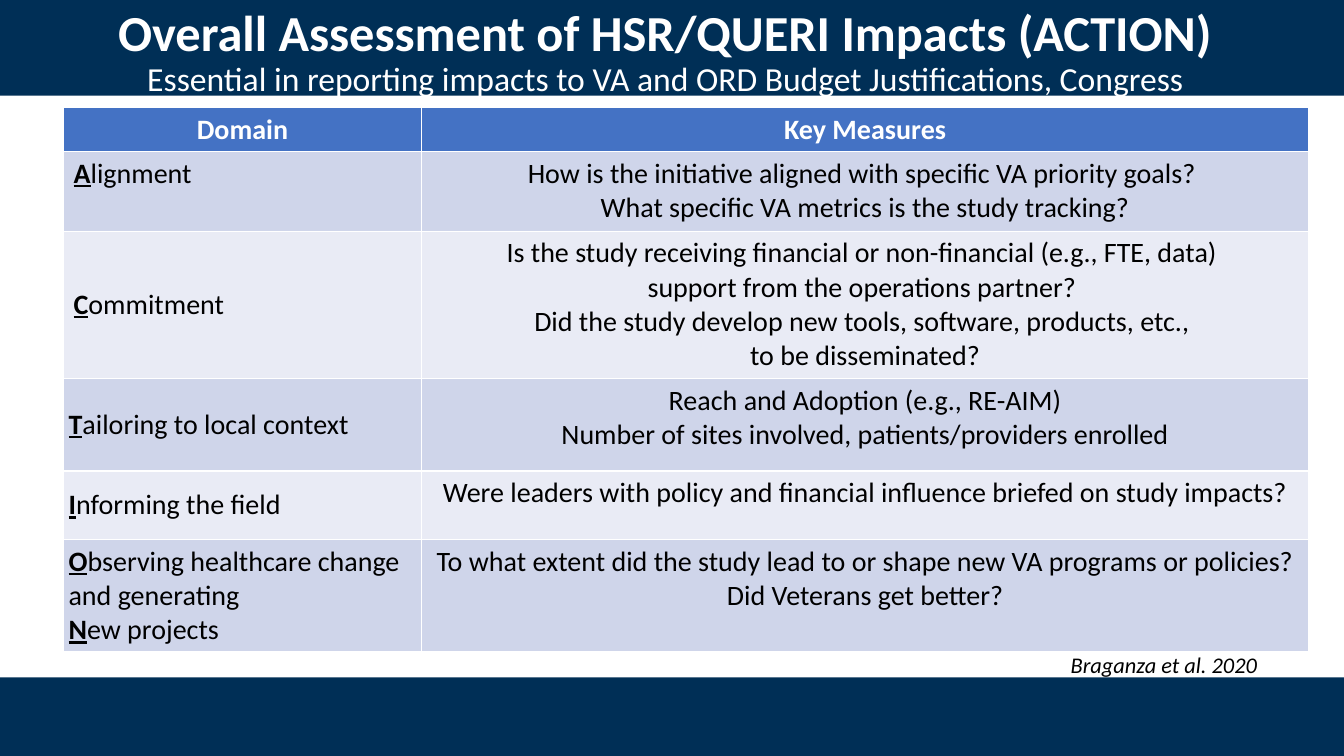
"""Build the ACTION impact assessment slide."""
import pptx
import pptx.dml.color
import pptx.enum.shapes
import pptx.enum.text
import pptx.util

Inches = pptx.util.Inches
ALIGN = pptx.enum.text.PP_ALIGN
ANCHOR = pptx.enum.text.MSO_ANCHOR
NAVY, WHITE, BLACK = "002F56", "FFFFFF", "000000"
HEADER_BLUE, BANDS = "4472C4", ["CFD5EA", "E9EBF5"]


def color(hex_value):
    return pptx.dml.color.RGBColor.from_string(hex_value)


def style(run, size, hex_value, bold=False):
    run.font.name = "Calibri"
    run.font.size = pptx.util.Pt(size)
    run.font.color.rgb = color(hex_value)
    run.font.bold = bold


deck = pptx.Presentation()
deck.slide_width, deck.slide_height = Inches(13.33), Inches(7.5)
slide = deck.slides.add_slide(deck.slide_layouts[6])

for top, height in [(0, 0.95), (6.72, 0.78)]:
    band = slide.shapes.add_shape(pptx.enum.shapes.MSO_SHAPE.RECTANGLE,
                                  0, Inches(top), deck.slide_width, Inches(height))
    band.shadow.inherit = False
    band.fill.solid()
    band.fill.fore_color.rgb = color(NAVY)
    band.line.fill.background()

title = slide.shapes.add_textbox(Inches(0.22), Inches(0.12), Inches(12.76), Inches(0.82)).text_frame
title.word_wrap = True
title.vertical_anchor = ANCHOR.MIDDLE
heading = title.paragraphs[0]
heading.text = ("Overall Assessment of HSR/QUERI Impacts (ACTION)\v"
                "Essential in reporting impacts to VA and ORD Budget Justifications, Congress")
heading.alignment = ALIGN.CENTER
heading.line_spacing = 0.9
style(heading.runs[0], 36, WHITE, bold=True)
style(heading.runs[1], 24, WHITE)

domains = [
    (0.79, 0.1, ANCHOR.TOP, ["Alignment"],
     "How is the initiative aligned with specific VA priority goals? \v"
     "What specific VA metrics is the study tracking?"),
    (1.46, 0.1, ANCHOR.MIDDLE, ["Commitment"],
     "Is the study receiving financial or non-financial (e.g., FTE, data) \v"
     "support from the operations partner? \v"
     "Did the study develop new tools, software, products, etc., \v"
     "to be disseminated?"),
    (0.92, 0.05, ANCHOR.MIDDLE, ["Tailoring to local context"],
     "Reach and Adoption (e.g., RE-AIM)\n"
     "Number of sites involved, patients/providers enrolled"),
    (0.68, 0.05, ANCHOR.MIDDLE, ["Informing the field"],
     "Were leaders with policy and financial influence briefed on study impacts?"),
    (1.11, 0.05, ANCHOR.MIDDLE, ["Observing healthcare change and generating ", "New projects"],
     "To what extent did the study lead to or shape new VA programs or policies?\n"
     "Did Veterans get better?"),
]
header_height = 0.43
column_widths = [3.55, 8.8]
table_height = header_height + sum(domain[0] for domain in domains)
table = slide.shapes.add_table(len(domains) + 1, 2, Inches(0.63), Inches(1.07),
                               Inches(sum(column_widths)), Inches(table_height)).table
for column, width in zip(table.columns, column_widths):
    column.width = Inches(width)

table.rows[0].height = Inches(header_height)
for cell, label in zip(table.rows[0].cells, ["Domain", "Key Measures"]):
    cell.fill.solid()
    cell.fill.fore_color.rgb = color(HEADER_BLUE)
    cell.text_frame.text = label
    cell.text_frame.paragraphs[0].alignment = ALIGN.CENTER
    style(cell.text_frame.paragraphs[0].runs[0], 20, WHITE, bold=True)

for index, (height, inset, anchor, domain_lines, measures) in enumerate(domains):
    row = table.rows[index + 1]
    row.height = Inches(height)
    domain_cell, measures_cell = row.cells
    for cell in row.cells:
        cell.fill.solid()
        cell.fill.fore_color.rgb = color(BANDS[index % 2])
        cell.margin_left = cell.margin_right = Inches(inset)
        cell.margin_top = cell.margin_bottom = Inches(0.05)

    domain_cell.vertical_anchor = anchor
    domain_name = domain_cell.text_frame.paragraphs[0]
    for number, line in enumerate(domain_lines):
        if number:
            domain_name.add_line_break()
        initial, rest = domain_name.add_run(), domain_name.add_run()
        initial.text, rest.text = line[0], line[1:]
        style(initial, 20, BLACK, bold=True)
        initial.font.underline = True
        style(rest, 20, BLACK)

    measures_cell.text_frame.text = measures
    for paragraph in measures_cell.text_frame.paragraphs:
        paragraph.alignment = ALIGN.CENTER
        for run in paragraph.runs:
            style(run, 20, BLACK)

citation = slide.shapes.add_textbox(Inches(10.52), Inches(6.41), Inches(2.08), Inches(0.37)).text_frame
citation.word_wrap = False
citation.text = "Braganza et al. 2020"
style(citation.paragraphs[0].runs[0], 16, BLACK)
citation.paragraphs[0].runs[0].font.italic = True

deck.save("out.pptx")
